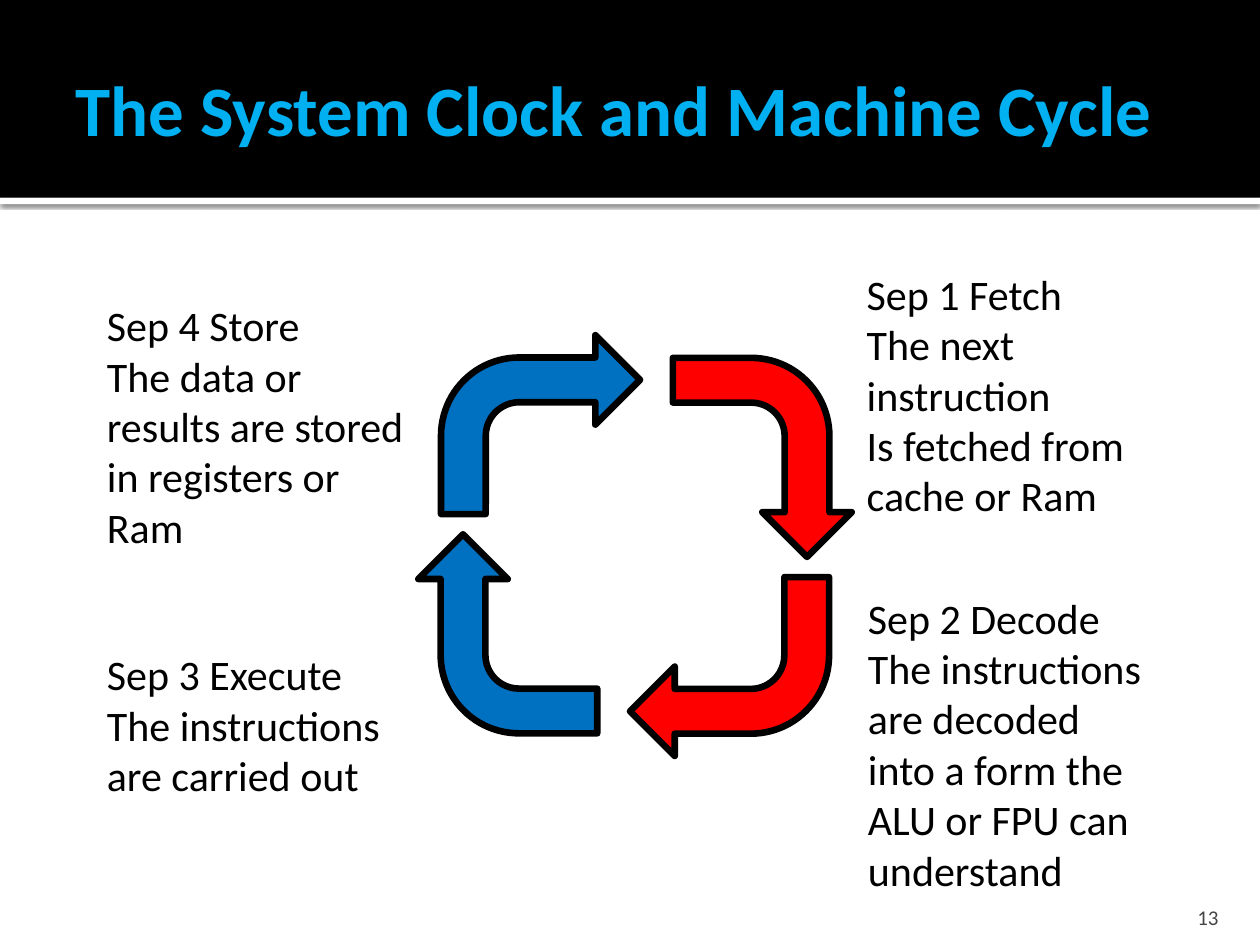
import pptx
import pptx.dml.color
import pptx.enum.shapes
import pptx.enum.text
import pptx.oxml
import pptx.oxml.ns
import pptx.util

Inches = pptx.util.Inches
SHAPES = pptx.enum.shapes.MSO_SHAPE
ANCHOR = pptx.enum.text.MSO_ANCHOR
ALIGN = pptx.enum.text.PP_ALIGN

WIDTH, HEIGHT = 10, 7.5
COLOURS = {
    "band": "000000",
    "rule": "FFFFFF",
    "title": "00B0F0",
    "text": "000000",
    "number": "454545",
    "processing": "FF0000",
    "finishing": "0070C0",
}
ARROW_WIDTH, ARROW_HEIGHT = 1.58, 1.42
CYCLE_CENTRE = (5.04, 4.33)

# Arrow offset from the cycle centre, rotation, colour, text box, paragraphs
STEPS = [
    ((1.01, -0.7), 90, "processing", (6.78, 2.08, 2.42, 2.12),
     ["Sep 1 Fetch", "The next instruction", "Is fetched from cache or Ram"]),
    ((0.75, 0.96), 180, "processing", (6.79, 4.65, 2.42, 2.52),
     ["Sep 2 Decode",
      "The instructions are decoded into a form the ALU or FPU can understand"]),
    ((-1.01, 0.7), 270, "finishing", (0.75, 5.1, 2.42, 1.31),
     ["Sep 3 Execute", "The instructions are carried out"]),
    ((-0.75, -0.96), 0, "finishing", (0.75, 2.33, 2.58, 2.12),
     ["Sep 4 Store", "The data or results are stored in registers or Ram"]),
]


def colour(name):
    return pptx.dml.color.RGBColor.from_string(COLOURS[name])


def write_text(shape, paragraphs, size, colour_name, bold=False, align=None, **frame_format):
    frame = shape.text_frame
    frame.text = "\n".join(paragraphs)
    for name, value in {"word_wrap": True, **frame_format}.items():
        setattr(frame, name, value)
    font_format = {"name": "Calibri", "size": pptx.util.Pt(size), "bold": bold}
    for paragraph in frame.paragraphs:
        paragraph.alignment = align
        for run in paragraph.runs:
            for name, value in font_format.items():
                setattr(run.font, name, value)
            run.font.color.rgb = colour(colour_name)


def add_filled_shape(slide, kind, box, colour_name):
    shape = slide.shapes.add_shape(kind, *map(Inches, box))
    shape.shadow.inherit = False
    shape.fill.solid()
    shape.fill.fore_color.rgb = colour(colour_name)
    shape.line.fill.background()
    return shape


def add_lower_shadow(shape):
    effects = shape._element.spPr.find(pptx.oxml.ns.qn("a:effectLst"))
    effects.append(pptx.oxml.parse_xml(
        f'<a:outerShdw {pptx.oxml.ns.nsdecls("a")} blurRad="31750" dist="10160" '
        'dir="5400000" algn="tl" rotWithShape="0">'
        '<a:srgbClr val="000000"><a:alpha val="60000"/></a:srgbClr></a:outerShdw>'))


def add_header(slide, left, top, width, height):
    rule = add_filled_shape(slide, SHAPES.RECTANGLE, (left, top + height, width, 0.05), "rule")
    add_lower_shadow(rule)
    add_filled_shape(slide, SHAPES.RECTANGLE, (left, top, width, height), "band")
    title = slide.shapes.title
    slide.shapes._spTree.append(title._element)  # in front of the band
    title_box = {"left": left + 0.5, "top": top + 0.17, "width": width - 1, "height": height - 0.2}
    for name, value in title_box.items():
        setattr(title, name, Inches(value))
    write_text(title, ["The System Clock and Machine Cycle"], 40.5, "title", bold=True,
               align=ALIGN.LEFT, vertical_anchor=ANCHOR.MIDDLE,
               auto_size=pptx.enum.text.MSO_AUTO_SIZE.NONE,
               margin_left=Inches(0.1), margin_right=Inches(0.05))


def add_arrow(slide, centre, rotation, colour_name):
    box = (centre[0] - ARROW_WIDTH / 2, centre[1] - ARROW_HEIGHT / 2, ARROW_WIDTH, ARROW_HEIGHT)
    arrow = add_filled_shape(slide, SHAPES.BENT_ARROW, box, colour_name)
    arrow.rotation = rotation
    arrow.line.color.rgb = colour("text")
    arrow.line.width = pptx.util.Pt(3.78)
    arrow.line._get_or_add_ln().append(
        pptx.oxml.parse_xml(f'<a:round {pptx.oxml.ns.nsdecls("a")}/>'))


def add_cycle(slide, centre_x, centre_y):
    for (shift_x, shift_y), rotation, colour_name, box, paragraphs in STEPS:
        add_arrow(slide, (centre_x + shift_x, centre_y + shift_y), rotation, colour_name)
        label = slide.shapes.add_textbox(*map(Inches, box))
        write_text(label, paragraphs, 24, "text",
                   auto_size=pptx.enum.text.MSO_AUTO_SIZE.SHAPE_TO_FIT_TEXT)


def add_slide_number(slide, *box):
    number = slide.shapes.add_textbox(*map(Inches, box))
    write_text(number, ["13"], 12, "number", align=ALIGN.RIGHT,
               vertical_anchor=ANCHOR.BOTTOM, margin_bottom=0)


def main():
    presentation = pptx.Presentation()
    presentation.slide_width = Inches(WIDTH)
    presentation.slide_height = Inches(HEIGHT)
    slide = presentation.slides.add_slide(presentation.slide_layouts.get_by_name("Title Only"))
    add_header(slide, 0, 0, WIDTH, 1.57)
    add_slide_number(slide, 8.97, 7.08, 0.8, 0.3)
    add_cycle(slide, *CYCLE_CENTRE)
    presentation.save("out.pptx")


if __name__ == "__main__":
    main()
